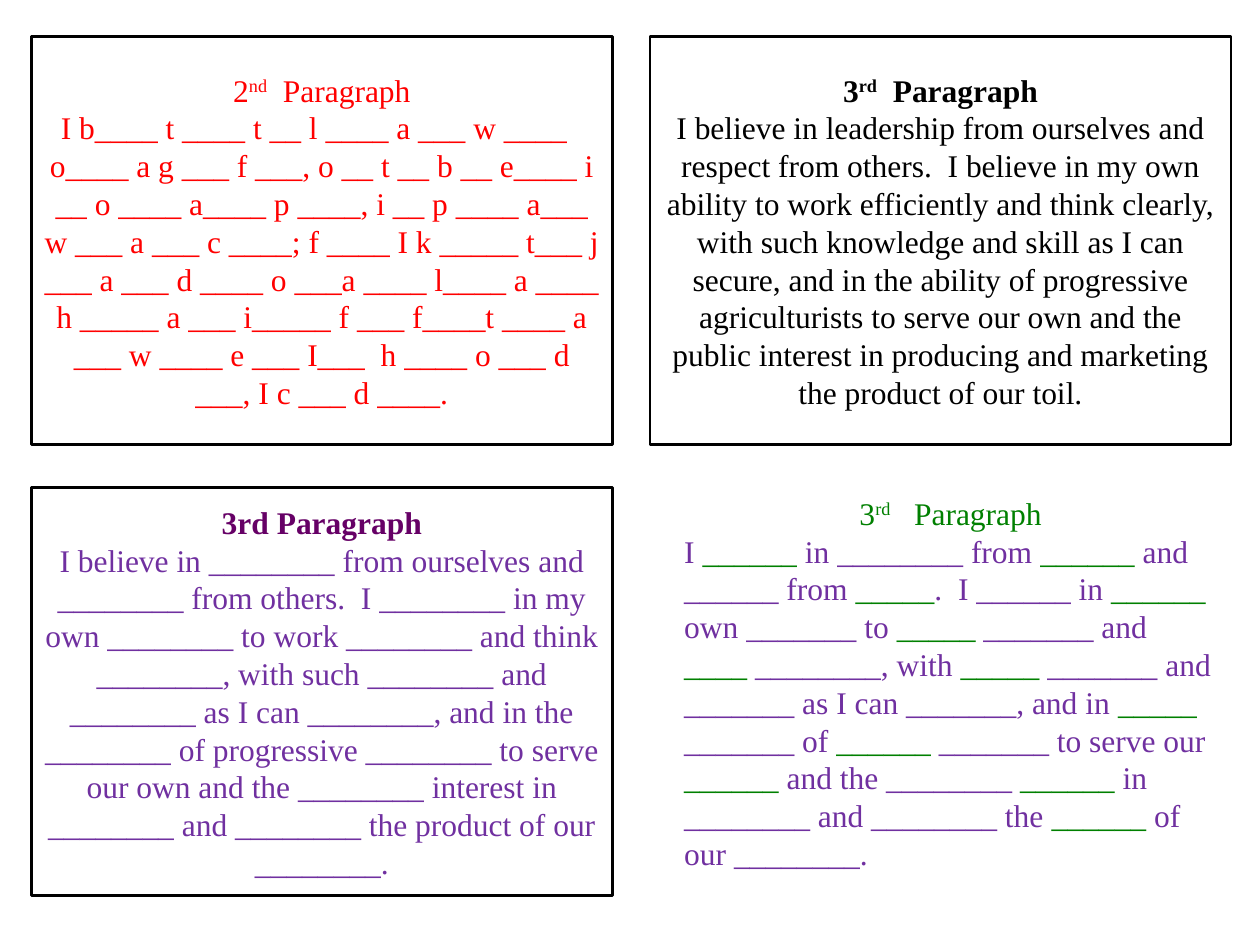
from pptx import Presentation, util as u
from pptx.dml.color import RGBColor
from pptx.enum import shapes, text

COLOURS = {
    "black": "000000", "red": "FF0000", "plum": "660066",
    "purple": "7030A0", "green": "008000",
}

RED_CLUES = (
    "I b____ t ____ t __ l ____ a ___ w ____   o____ a g ___ f ___, o __ t __ b __ e____ i "
    "__ o ____ a____ p ____, i __ p ____ a___ w ___ a ___ c ____; f ____ I k _____ t___ j "
    "___ a ___ d ____ o ___a ____ l____ a ____ h _____ a ___ i_____ f ___ f____t ____ a "
    "___ w ____ e ___ I___  h ____ o ___ d ___, I c ___ d ____."
)
FULL_CREED = (
    "I believe in leadership from ourselves and respect from others.  I believe in my own "
    "ability to work efficiently and think clearly, with such knowledge and skill as I can "
    "secure, and in the ability of progressive agriculturists to serve our own and the "
    "public interest in producing and marketing the product of our toil."
)
FEW_BLANKS = (
    "I believe in ________ from ourselves and ________ from others.  I ________ in my own "
    "________ to work ________ and think ________, with such ________ and ________ as I can "
    "________, and in the ________ of progressive ________ to serve our own and the ________ "
    "interest in ________ and ________ the product of our ________."
)
MANY_BLANKS = (
    "I |______| in ________ from |______| and ______ from |_____|.  I ______ in |______ |"
    "own _______ to |_____| _______ and |____ |________, with |_____| _______ and _______ "
    "as I can _______, and in |_____| _______ of |______ |_______ to serve our |______| and "
    "the ________ |______| in ________ and ________ the |______| of our ________."
)


class Cards:
    """Builds creed study cards on a grid of two columns and two rows."""

    ORIGIN = (0.25, 0.29)
    STEP = (4.91, 3.58)
    CELL = (4.61, 3.24)
    FONT = {"name": "Times New Roman", "size": u.Pt(18)}

    def __init__(self):
        self.deck = Presentation()
        self.deck.slide_width, self.deck.slide_height = u.Inches(10), u.Inches(7.5)
        self.page = self.deck.slides.add_slide(self.deck.slide_layouts[6])

    def place(self, column, row, wide=1, high=1):
        starts = [o + s * n for o, s, n in zip(self.ORIGIN, self.STEP, (column, row))]
        sizes = [c * n for c, n in zip(self.CELL, (wide, high))]
        return [u.Inches(value) for value in starts + sizes]

    def card(self, column, row):
        box = self.page.shapes.add_shape(
            shapes.MSO_SHAPE.RECTANGLE, *self.place(column, row))
        box.shadow.inherit = False
        box.fill.background()
        box.line.color.rgb = RGBColor.from_string(COLOURS["black"])
        box.line.width = u.Pt(1.5)
        box.text_frame.vertical_anchor = text.MSO_ANCHOR.MIDDLE
        return box.text_frame

    def open_card(self, column, row, wide, high):
        box = self.page.shapes.add_textbox(*self.place(column, row, wide, high))
        box.text_frame.word_wrap = True
        box.text_frame.auto_size = text.MSO_AUTO_SIZE.SHAPE_TO_FIT_TEXT
        return box.text_frame

    def span(self, para, words, colour, bold=False, raised=False):
        span = para.add_run()
        span.text = words
        for key, value in {**self.FONT, "bold": bold}.items():
            setattr(span.font, key, value)
        span.font.color.rgb = RGBColor.from_string(COLOURS[colour])
        if raised:
            span.font._element.set("baseline", "30000")

    def heading(self, frame, parts, colour, bold=False):
        para = frame.paragraphs[0]
        para.alignment = text.PP_ALIGN.CENTER
        for index, words in enumerate(parts):
            self.span(para, words, colour, bold, raised=index == 1)
        return para

    def body(self, para, words, colours, align=text.PP_ALIGN.CENTER):
        para.alignment = align
        for index, part in enumerate(words.split("|")):
            self.span(para, part, colours[index % len(colours)])

    def save(self):
        self.deck.save("out.pptx")


def main():
    cards = Cards()

    frame = cards.card(0, 0)
    cards.heading(frame, ["2", "nd", "  Paragraph"], "red")
    cards.body(frame.add_paragraph(), RED_CLUES, ["red"])

    for column, row, title, title_colour, words, colour in (
        (1, 0, ["3", "rd", "  Paragraph"], "black", FULL_CREED, "black"),
        (0, 1, ["3rd Paragraph"], "plum", FEW_BLANKS, "purple"),
    ):
        para = cards.heading(cards.card(column, row), title, title_colour, bold=True)
        para.add_line_break()
        cards.body(para, words, [colour])

    frame = cards.open_card(1.035, 1, 0.96, 0.97)
    cards.heading(frame, ["3", "rd", "   Paragraph"], "green")
    cards.body(frame.add_paragraph(), MANY_BLANKS, ["purple", "green"], text.PP_ALIGN.LEFT)

    cards.save()


if __name__ == "__main__":
    main()
